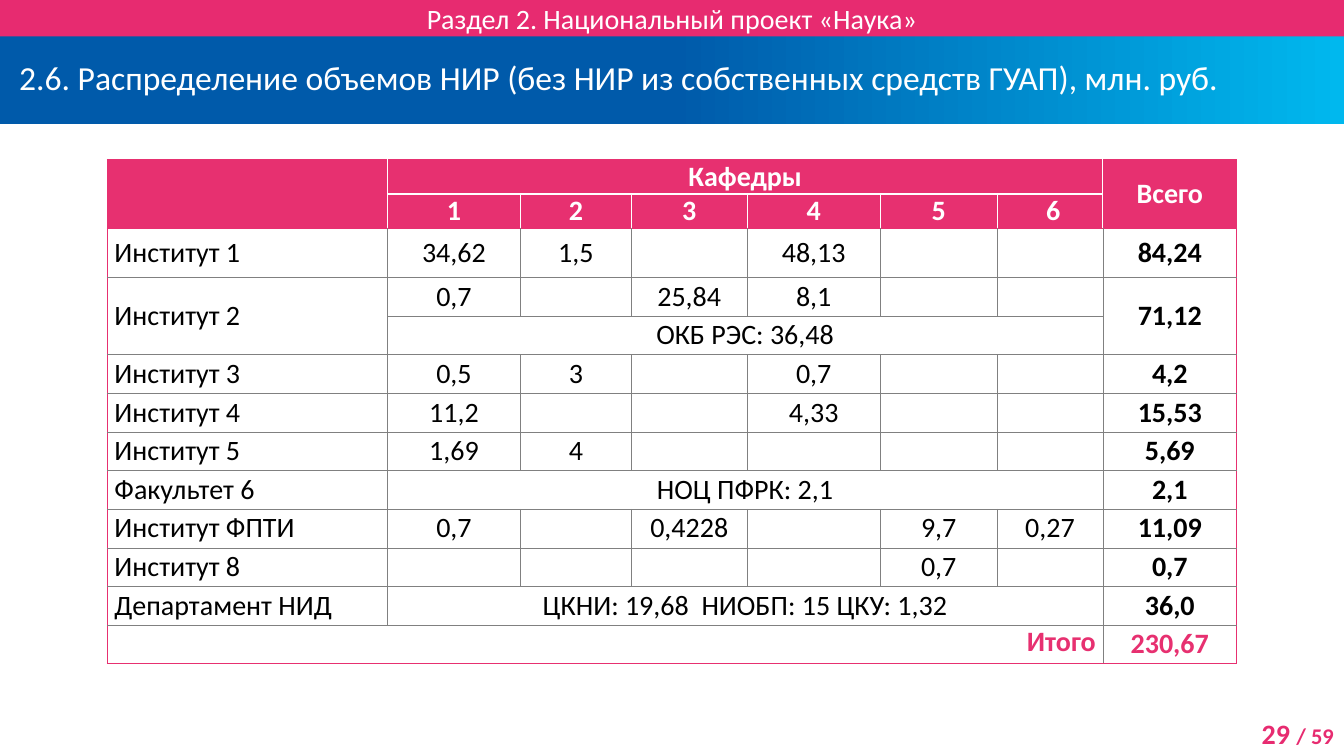
from dataclasses import dataclass

from lxml import etree
from pptx import Presentation
from pptx.dml.color import RGBColor
from pptx.enum.shapes import MSO_SHAPE
from pptx.enum.text import MSO_ANCHOR, PP_ALIGN
from pptx.oxml.ns import qn
from pptx.util import Pt

RECT = MSO_SHAPE.RECTANGLE
TOP, MIDDLE = MSO_ANCHOR.TOP, MSO_ANCHOR.MIDDLE
LEFT, CENTER, RIGHT = PP_ALIGN.LEFT, PP_ALIGN.CENTER, PP_ALIGN.RIGHT


@dataclass(frozen=True)
class Theme:
    font: str = "Calibri"
    title: int = 24
    body: int = 20
    small: int = 16
    pink: str = "E72B70"
    table_pink: str = "E73070"
    blue: str = "005AAA"
    cyan: str = "00B8EE"
    grid: str = "808080"
    white: str = "FFFFFF"
    black: str = "000000"


T = Theme()
SLIDE_W, SLIDE_H = 960, 540

# Table content: one line per row, "" for an empty or merged-away cell
ROWS = [
    ["", "Кафедры", "", "", "", "", "", "Всего"],
    ["", "1", "2", "3", "4", "5", " 6", ""],
    ["Институт 1", "34,62", "1,5", "", "48,13", "", "", "84,24"],
    ["Институт 2", "0,7", "", "25,84", "8,1", "", "", "71,12"],
    ["", "ОКБ РЭС: 36,48", "", "", "", "", "", ""],
    ["Институт 3", "0,5", "3", "", "0,7", "", "", "4,2"],
    ["Институт 4", "11,2", "", "", "4,33", "", "", "15,53"],
    ["Институт 5", "1,69", "4", "", "", "", "", "5,69"],
    ["Факультет 6", "НОЦ ПФРК: 2,1", "", "", "", "", "", "2,1"],
    ["Институт ФПТИ", "0,7", "", "0,4228", "", "9,7", "0,27", "11,09"],
    ["Институт 8", "", "", "", "", "0,7", "", "0,7"],
    ["Департамент НИД", "ЦКНИ: 19,68  НИОБП: 15 ЦКУ: 1,32", "", "", "", "", "", "36,0"],
    ["Итого", "", "", "", "", "", "", "230,67"],
]
HEADER_ROWS = 2
LAST_ROW, LAST_COL = len(ROWS) - 1, len(ROWS[0]) - 1
# (row, column): (rows spanned, columns spanned)
SPANS = {(0, 0): (2, 1), (0, 1): (1, 6), (0, 7): (2, 1), (3, 0): (2, 1),
         (3, 7): (2, 1), (4, 1): (1, 6), (8, 1): (1, 6), (11, 1): (1, 6),
         (12, 0): (1, 7)}
COL_WIDTHS = [200, 95, 79.2, 82.8, 95, 83.6, 75.4, 95.8]
ROW_HEIGHTS = [24.4] * HEADER_ROWS + [35.2] + [27.6] * 10


def rgb(color):
    return RGBColor.from_string(color)


def style(font, size, color, bold=False):
    font.name, font.size, font.bold = T.font, Pt(size), bold
    font.color.rgb = rgb(color)


def add_band(slide, top, height, text, size, align, indent=0):
    """Full-width bar with one line of white text."""
    sp = slide.shapes.add_shape(RECT, 0, Pt(top), Pt(SLIDE_W), Pt(height))
    sp.shadow.inherit = False
    sp.line.fill.background()
    tf = sp.text_frame
    tf.word_wrap = True
    tf.vertical_anchor = MIDDLE
    tf.margin_left = Pt(indent)
    tf.margin_right = tf.margin_top = tf.margin_bottom = 0
    p = tf.paragraphs[0]
    p.text, p.alignment = text, align
    style(p.font, size, T.white)
    return sp


def fill_gradient(sp, start, end, start_position):
    sp.fill.gradient()
    sp.fill.gradient_angle = 0
    first, last = sp.fill.gradient_stops
    first.color.rgb, first.position = rgb(start), start_position
    last.color.rgb, last.position = rgb(end), 1


def add_page_number(slide, number, total):
    sp = slide.shapes.add_textbox(Pt(873.4), Pt(508.3), Pt(86.4), Pt(31.5))
    tf = sp.text_frame
    tf.word_wrap = True
    p = tf.paragraphs[0]
    p.alignment = RIGHT
    for text, size in ((f"{number} ", T.body), (f"/ {total}", T.small)):
        r = p.add_run()
        r.text = text
        style(r.font, size, T.pink, bold=True)


def cell_borders(row, col):
    """Colour and width of each side, from the cell's place in the table."""
    outer, inner, grid = (T.table_pink, 1), (T.white, 1), (T.grid, 0.25)
    rows, cols = SPANS.get((row, col), (1, 1))
    bottom, right = row + rows, col + cols
    line = inner if row < HEADER_ROWS else grid
    return {
        "a:lnL": outer if col == 0 else line,
        "a:lnR": outer if right > LAST_COL else line,
        "a:lnT": outer if row in (0, HEADER_ROWS) else line,
        "a:lnB": outer if bottom in (HEADER_ROWS, LAST_ROW + 1) else line,
    }


def set_borders(cell, borders):
    tc_pr = cell._tc.get_or_add_tcPr()
    for i, (tag, (color, width)) in enumerate(borders.items()):
        ln = etree.Element(qn(tag), w=str(Pt(width)))
        fill = etree.SubElement(ln, qn("a:solidFill"))
        etree.SubElement(fill, qn("a:srgbClr"), val=color)
        tc_pr.insert(i, ln)


def format_cell(cell, row, col, text):
    header, total = row < HEADER_ROWS, row == LAST_ROW
    name = col == 0 and not total
    cell.margin_top = cell.margin_bottom = 0
    cell.margin_left = cell.margin_right = Pt(5)
    cell.vertical_anchor = TOP if total and col == 0 else MIDDLE
    if header:
        cell.fill.solid()
        cell.fill.fore_color.rgb = rgb(T.table_pink)
    else:
        cell.fill.background()
    p = cell.text_frame.paragraphs[0]
    p.text = text
    p.alignment = LEFT if name else RIGHT if col == 0 else CENTER
    color = T.white if header else T.table_pink if total else T.black
    style(p.font, T.body, color, bold=header or total or col == LAST_COL)
    set_borders(cell, cell_borders(row, col))


def add_volume_table(slide, left, top):
    sp = slide.shapes.add_table(len(ROWS), len(COL_WIDTHS), Pt(left), Pt(top),
                                Pt(sum(COL_WIDTHS)), Pt(sum(ROW_HEIGHTS)))
    table = sp.table
    table.first_row = table.horz_banding = False
    for column, width in zip(table.columns, COL_WIDTHS):
        column.width = Pt(width)
    for row, height in zip(table.rows, ROW_HEIGHTS):
        row.height = Pt(height)
    for i, texts in enumerate(ROWS):
        for j, text in enumerate(texts):
            format_cell(table.cell(i, j), i, j, text)
    for (i, j), (rows, cols) in SPANS.items():
        table.cell(i, j).merge(table.cell(i + rows - 1, j + cols - 1))


def main():
    prs = Presentation()
    prs.slide_width, prs.slide_height = Pt(SLIDE_W), Pt(SLIDE_H)
    slide = prs.slides.add_slide(prs.slide_layouts[6])

    # Page number
    add_page_number(slide, 29, 59)

    # Title bar
    title = add_band(
        slide, 26, 62.6,
        "2.6. Распределение объемов НИР (без НИР из собственных средств ГУАП), млн. руб.",
        T.title, LEFT, indent=13.7)
    title.text_frame.paragraphs[0].line_spacing = Pt(T.title)
    fill_gradient(title, T.blue, T.cyan, 0.5)

    # Section bar
    section = add_band(slide, 0, 26, "Раздел 2. Национальный проект «Наука»",
                       T.body, CENTER)
    section.fill.solid()
    section.fill.fore_color.rgb = rgb(T.pink)

    # Table of research volumes
    add_volume_table(slide, 76.8, 114.2)

    prs.save("out.pptx")


if __name__ == "__main__":
    main()
